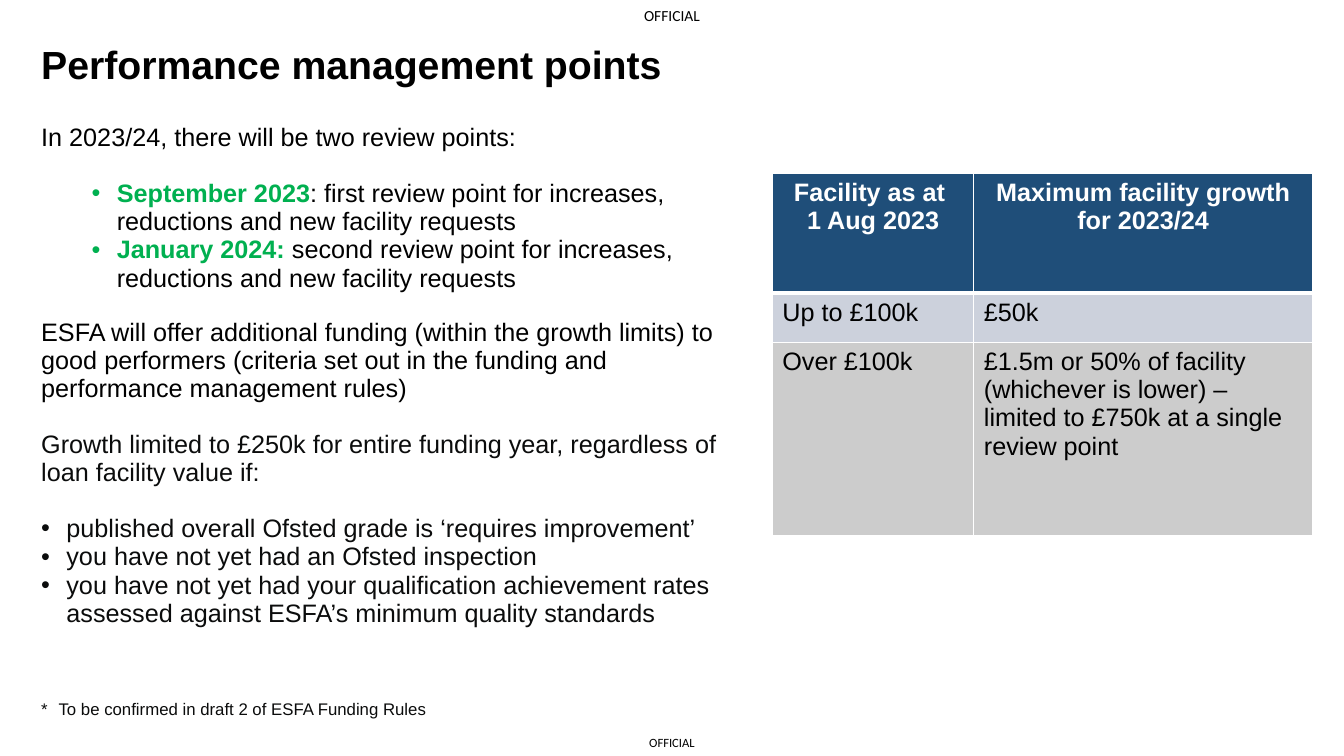
from pptx import Presentation
from pptx.dml.color import RGBColor
from pptx.enum.text import MSO_ANCHOR as Anchor, PP_ALIGN as Align
from pptx.oxml.ns import qn
from pptx.util import Inches, Pt
from lxml.etree import SubElement

BLACK, INK, WHITE = "000000", "0B0C0C", "FFFFFF"
GREEN, NAVY, LILAC, GREY = "00B050", "1F4E79", "CCD1DC", "CCCCCC"
LINE_GAP = 19.4  # one empty body line, in points


def colour(code):
    return RGBColor.from_string(code)


class Deck:
    """Style and current slide; lengths are percentages of the slide's size."""

    font = "Arial"
    body_size = 18

    def __init__(self):
        self.prs = Presentation()
        self.prs.slide_width, self.prs.slide_height = Inches(13.33), Inches(7.5)
        self.slide = self.prs.slides.add_slide(self.prs.slide_layouts[6])

    def across(self, share):
        return round(self.prs.slide_width * share / 100)

    def down(self, share):
        return round(self.prs.slide_height * share / 100)

    def area(self, left, top, width, height):
        return self.across(left), self.down(top), self.across(width), self.down(height)

    def style(self, run, code=BLACK, bold=False, size=None, font=None):
        run.font.name = font or self.font
        run.font.size = Pt(size or self.body_size)
        run.font.bold = bold
        run.font.color.rgb = colour(code)

    def box(self, left, top, width, height, anchor=Anchor.TOP):
        frame = self.slide.shapes.add_textbox(*self.area(left, top, width, height)).text_frame
        frame.word_wrap = True
        frame.vertical_anchor = anchor
        return frame

    def line(self, frame, text, **look):
        frame.text = text
        self.style(frame.paragraphs[0].runs[0], **look)
        return frame.paragraphs[0]

    def marking(self, top, height, size):
        """Small protective marking, centred across the slide."""
        frame = self.box(45, top, 10, height, Anchor.MIDDLE)
        frame.margin_left = frame.margin_right = frame.margin_top = frame.margin_bottom = 0
        self.line(frame, "OFFICIAL", size=size, font="Calibri").alignment = Align.CENTER

    def bullet(self, paragraph, indent):
        props = paragraph._p.get_or_add_pPr()
        props.set("marL", str(Inches(indent)))
        props.set("indent", str(-Inches(0.25)))
        SubElement(props, qn("a:buFont"), typeface=self.font)
        SubElement(props, qn("a:buChar"), char="•")

    def paragraphs(self, frame, entries):
        """Each entry: space before, bullet indent or None, runs of (text, look)."""
        for number, (gap, indent, runs) in enumerate(entries):
            paragraph = frame.paragraphs[0] if number == 0 else frame.add_paragraph()
            paragraph.line_spacing = 0.94
            paragraph.space_before = Pt(gap)
            if indent:
                self.bullet(paragraph, indent)
            for text, look in runs:
                run = paragraph.add_run()
                run.text = text
                self.style(run, **look)

    def borders(self, cell, bottom):
        props = cell._tc.get_or_add_tcPr()
        edges = (("lnL", 1), ("lnR", 1), ("lnT", 1), ("lnB", bottom))
        for position, (edge, points) in enumerate(edges):
            line = props.makeelement(qn(f"a:{edge}"), {"w": str(Pt(points))})
            fill = SubElement(line, qn("a:solidFill"))
            SubElement(fill, qn("a:srgbClr"), val=WHITE)
            props.insert(position, line)

    def table(self, left, top, widths, heights, rows, fills):
        area = self.area(left, top, sum(widths), sum(heights))
        table = self.slide.shapes.add_table(len(rows), len(widths), *area).table
        for column, width in zip(table.columns, widths):
            column.width = self.across(width)
        for r, (texts, fill) in enumerate(zip(rows, fills)):
            table.rows[r].height = self.down(heights[r])
            heading = r == 0
            for c, text in enumerate(texts):
                cell = table.cell(r, c)
                cell.text_frame.text = text
                for paragraph in cell.text_frame.paragraphs:
                    paragraph.alignment = Align.CENTER if heading else Align.LEFT
                    self.style(paragraph.runs[0], WHITE if heading else BLACK, heading)
                cell.fill.solid()
                cell.fill.fore_color.rgb = colour(fill)
                self.borders(cell, bottom=3 if heading else 1)


def main():
    deck = Deck()
    plain, ink, date = {}, {"code": INK}, {"code": GREEN, "bold": True}

    # Protective markings at the top and bottom
    deck.marking(0, 4.13, 11)
    deck.marking(96.4, 3.6, 9)

    # Title
    title = deck.box(2.33, 0.4, 89.8, 16.8, Anchor.MIDDLE)
    deck.line(title, "Performance management points", bold=True, size=28).line_spacing = 0.9

    # Review points and growth limits
    deck.paragraphs(deck.box(2.33, 15.73, 54.09, 68), [
        (0, None, [("In 2023/24, there will be two review points:", plain)]),
        (LINE_GAP, 0.75, [
            ("September 2023", date),
            (": first review point for increases, reductions and new facility requests", plain)]),
        (0, 0.75, [
            ("January 2024: ", date),
            ("second review point for increases, reductions and new facility requests", plain)]),
        (18, None, [("ESFA will offer additional funding (within the growth limits) to good "
                     "performers (criteria set out in the funding and performance "
                     "management rules)", plain)]),
        (LINE_GAP, None, [("Growth limited to £250k for entire funding year, regardless of "
                           "loan facility value if:", ink)]),
        (LINE_GAP, 0.25, [("published overall Ofsted grade is ‘requires improvement’", ink)]),
        (0, 0.25, [("you have not yet had an Ofsted inspection", ink)]),
        (0, 0.25, [("you have not yet had your qualification achievement rates assessed "
                    "against ESFA’s minimum quality standards", ink)]),
    ])

    # Footnote
    deck.paragraphs(deck.box(2.33, 89.3, 54.09, 7), [
        (0, None, [("*", {"code": INK, "size": 12}), (" ", {"size": 28}),
                   ("To be confirmed in draft 2 of ESFA Funding Rules",
                    {"code": INK, "size": 12})]),
    ])

    # Facility growth table
    deck.table(
        57.46, 22.93, widths=(15, 25.2), heights=(15.87, 6.53, 25.47),
        rows=[
            ("Facility as at \n1 Aug 2023", "Maximum facility growth for 2023/24"),
            ("Up to £100k", "£50k"),
            ("Over £100k", "£1.5m or 50% of facility (whichever is lower) – "
                           "limited to £750k at a single review point"),
        ],
        fills=(NAVY, LILAC, GREY))

    deck.prs.save("out.pptx")


if __name__ == "__main__":
    main()
